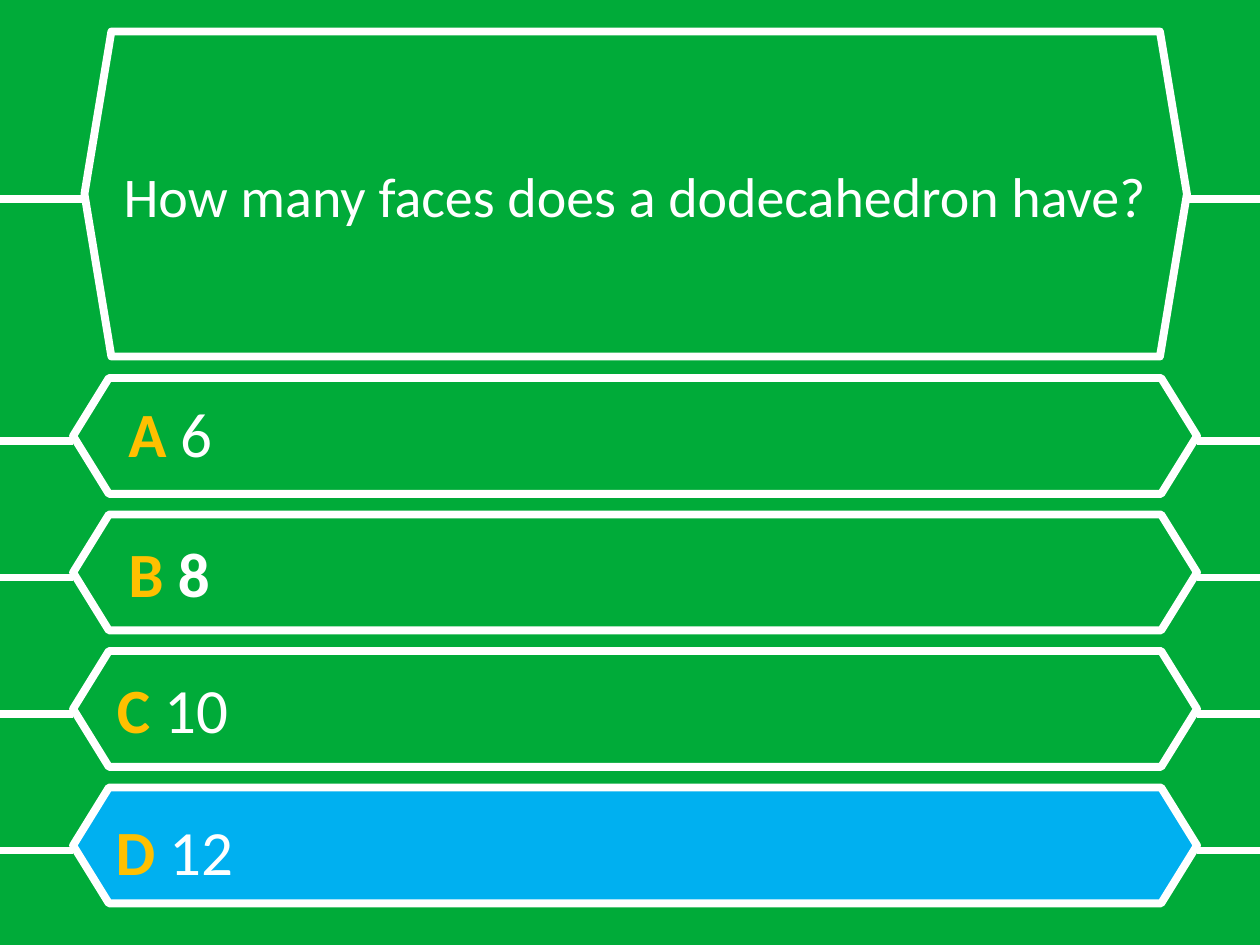
from lxml import etree
from pptx import Presentation
from pptx.dml.color import RGBColor
from pptx.enum import shapes, text
from pptx.oxml import ns
from pptx.util import Inches, Pt

COLORS = {"green": "00AB39", "blue": "00B0F0", "white": "FFFFFF", "gold": "FFC000"}
QUESTION = "How many faces does a dodecahedron have?"
ANSWERS = [
    {"letter": "A", "value": "6", "bold": False, "fill": None, "text_at": (0.92, 3.08)},
    {"letter": "B", "value": "8", "bold": True, "fill": None, "text_at": (0.92, 4.19)},
    {"letter": "C", "value": "10", "bold": False, "fill": None, "text_at": (0.83, 5.27)},
    {"letter": "D", "value": "12", "bold": False, "fill": "blue", "text_at": (0.82, 6.4)},
]
WIDTH, HEIGHT = 10, 7.5
QUESTION_BOX = (0.67, 0.25, 8.75, 2.58)
TITLE_BOX = (0.83, 0.42, 8.42, 2.25)
BAR_LEFT, BAR_TOP, BAR_WIDTH, BAR_HEIGHT = 0.58, 3, 8.92, 0.92
BAR_STEP = 3.25 / 3


def color(name):
    return RGBColor.from_string(COLORS[name])


def style_line(sp):
    sp.line.color.rgb = color("white")
    sp.line.width = Pt(4.5)


def add_hexagon(s, box, adj, fill=None):
    sp = s.shapes.add_shape(shapes.MSO_SHAPE.HEXAGON, *map(Inches, box))
    sp.adjustments[0] = adj
    sp.shadow.inherit = False
    if fill:
        sp.fill.solid()
        sp.fill.fore_color.rgb = color(fill)
    else:
        sp.fill.background()
    style_line(sp)


def add_side_lines(s, left, right, y):
    for start, end in ((left, 0), (WIDTH, right)):
        line = s.shapes.add_connector(
            shapes.MSO_CONNECTOR.STRAIGHT, *map(Inches, (start, y, end, y)))
        style_line(line)
        etree.SubElement(line._element.spPr, ns.qn("a:effectLst"))


def add_run(p, content, size, name, bold=False):
    r = p.add_run()
    r.text = content
    for key, value in {"name": "Calibri", "size": Pt(size), "bold": bold}.items():
        setattr(r.font, key, value)
    r.font.color.rgb = color(name)


def add_question(s):
    left, _, width, _ = QUESTION_BOX
    add_hexagon(s, QUESTION_BOX, 0.083)
    add_side_lines(s, left, left + width, 1.58)
    title = s.shapes.title
    for key, value in zip(("left", "top", "width", "height"), TITLE_BOX):
        setattr(title, key, Inches(value))
    tf = title.text_frame
    tf.word_wrap = True
    tf.vertical_anchor = text.MSO_ANCHOR.MIDDLE
    p = tf.paragraphs[0]
    p.alignment = text.PP_ALIGN.CENTER
    add_run(p, QUESTION, 32, "white")


def add_answer(s, index, answer):
    top = BAR_TOP + index * BAR_STEP
    add_hexagon(s, (BAR_LEFT, top, BAR_WIDTH, BAR_HEIGHT), 0.309, answer["fill"])
    add_side_lines(s, BAR_LEFT, BAR_LEFT + BAR_WIDTH, top + 0.5)
    sp = s.shapes.add_textbox(*map(Inches, (*answer["text_at"], 8.59, 0.71)))
    tf = sp.text_frame
    tf.word_wrap = True
    tf.auto_size = text.MSO_AUTO_SIZE.SHAPE_TO_FIT_TEXT
    p = tf.paragraphs[0]
    add_run(p, answer["letter"] + " ", 36, "gold", True)
    add_run(p, answer["value"], 36, "white", answer["bold"])


def main():
    prs = Presentation()
    prs.slide_width, prs.slide_height = Inches(WIDTH), Inches(HEIGHT)
    s = prs.slides.add_slide(prs.slide_layouts[5])
    s.background.fill.solid()
    s.background.fill.fore_color.rgb = color("green")
    add_question(s)
    for index, answer in enumerate(ANSWERS):
        add_answer(s, index, answer)
    prs.save("out.pptx")


if __name__ == "__main__":
    main()
